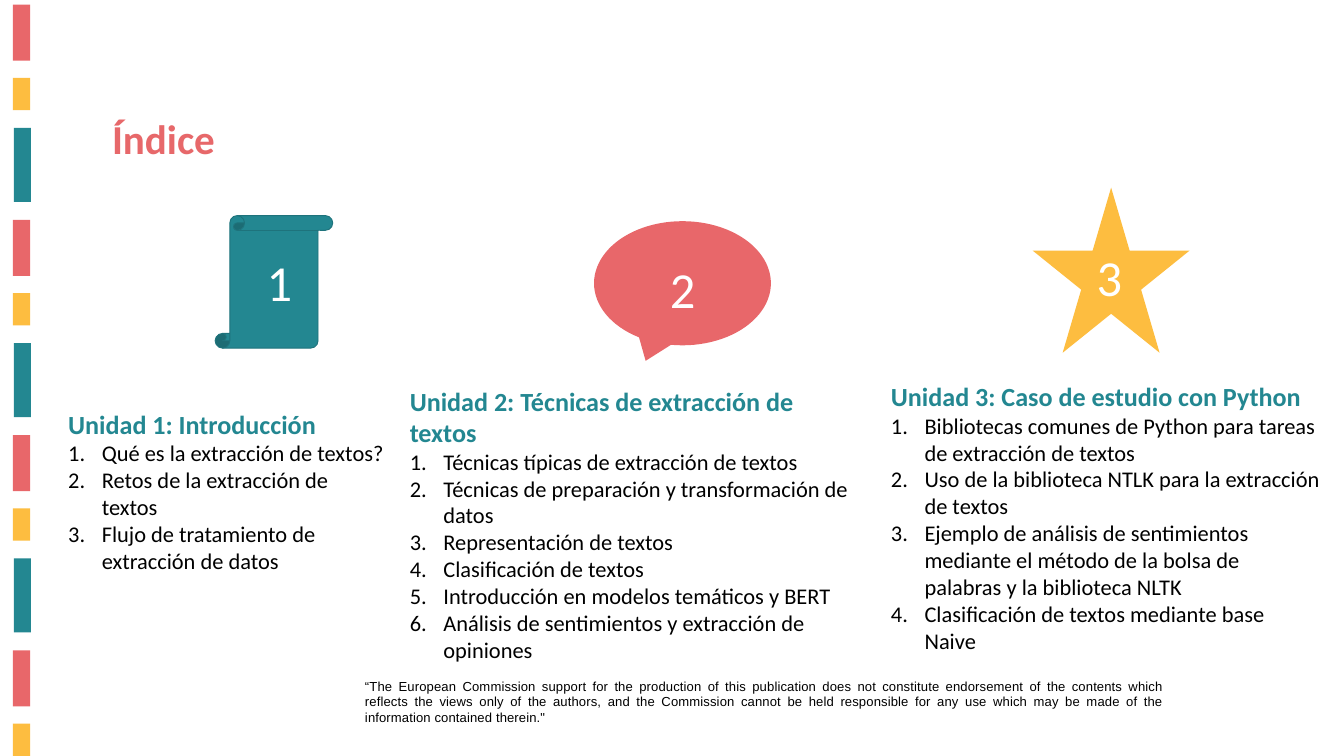
from pptx import Presentation
from pptx.dml.color import RGBColor
from pptx.enum.shapes import MSO_SHAPE as Shape
from pptx.enum.text import PP_ALIGN as Align
from pptx.oxml.ns import qn
from pptx.util import Pt
from lxml.etree import SubElement

TEAL, CORAL, YELLOW = "238791", "E8676A", "FDBD40"
BLACK, WHITE = "000000", "FFFFFF"


def colour(value):
    return RGBColor.from_string(value)


class SlideWriter:
    """Holds the slide and the style of its elements."""

    font = "Calibri"

    def __init__(self, slide):
        self.slide = slide

    def shape(self, kind, box, fill, line=None):
        shape = self.slide.shapes.add_shape(kind, *map(Pt, box))
        shape.shadow.inherit = False
        shape.fill.solid()
        shape.fill.fore_color.rgb = colour(fill)
        if line:
            shape.line.color.rgb = colour(line)
            shape.line.width = Pt(1)
        else:
            shape.line.fill.background()

    def frame(self, box):
        frame = self.slide.shapes.add_textbox(*map(Pt, box)).text_frame
        frame.word_wrap = True
        return frame

    def style(self, paragraph, size, fill, bold=False, font=None):
        for run in paragraph.runs:
            run.font.name = font or self.font
            run.font.size = Pt(size)
            run.font.bold = bold
            run.font.color.rgb = colour(fill)

    def text(self, text, box, size, fill, bold=False, font=None):
        frame = self.frame(box)
        frame.text = text
        paragraph = frame.paragraphs[0]
        self.style(paragraph, size, fill, bold, font)
        return paragraph

    def unit(self, heading, topics, box):
        frame = self.frame(box)
        frame.text = heading
        self.style(frame.paragraphs[0], 28, TEAL, True)
        for topic in topics:
            paragraph = frame.add_paragraph()
            paragraph.text = topic
            properties = paragraph._p.get_or_add_pPr()
            properties.set("marL", str(Pt(36)))
            properties.set("indent", str(-Pt(36)))
            SubElement(properties, qn("a:buFont"), typeface="+mj-lt")
            SubElement(properties, qn("a:buAutoNum"), type="arabicPeriod")
            self.style(paragraph, 24, BLACK)


def main():
    presentation = Presentation()
    presentation.slide_width, presentation.slide_height = Pt(1440), Pt(810)
    writer = SlideWriter(presentation.slides.add_slide(presentation.slide_layouts[6]))

    stripes = [(13.7, 5, 18.7, 60, CORAL), (13.7, 83.5, 18.7, 34.5, YELLOW),
               (15, 137, 18, 79.4, TEAL)]
    for index in range(11):
        cycle, position = divmod(index, len(stripes))
        left, top, width, height, fill = stripes[position]
        writer.shape(Shape.RECTANGLE, (left, top + cycle * 230.6, width, height), fill)

    disclaimer = writer.text(
        "“The European Commission support for the production of this publication does not "
        "constitute endorsement of the contents which reflects the views only of the authors, "
        "and the Commission cannot be held responsible for any use which may be made of the "
        'information contained therein."',
        (384, 723, 870, 58), 14, BLACK, font="Arial")
    disclaimer.alignment = Align.JUSTIFY
    disclaimer.runs[0]._r.get_or_add_rPr().set("spc", "10")

    writer.text("Índice", (113, 118, 487, 60), 44, "E7686A", True)

    writer.shape(Shape.VERTICAL_SCROLL, (230.5, 231, 126, 142), TEAL, "1E737C")
    writer.shape(Shape.OVAL_CALLOUT, (636.5, 237, 189.5, 133), CORAL)
    writer.shape(Shape.STAR_5_POINT, (1106.5, 201, 168, 177), YELLOW)

    writer.unit("Unidad 1: Introducción", [
        "Qué es la extracción de textos?",
        "Retos de la extracción de textos",
        "Flujo de tratamiento de extracción de datos",
    ], (66, 433.5, 354, 250))
    writer.unit("Unidad 2: Técnicas de extracción de textos", [
        "Técnicas típicas de extracción de textos",
        "Técnicas de preparación y transformación de datos",
        "Representación de textos",
        "Clasificación de textos",
        "Introducción en modelos temáticos y BERT",
        "Análisis de sentimientos y extracción de opiniones",
    ], (432, 409, 487.5, 337))
    writer.unit("Unidad 3: Caso de estudio con Python", [
        "Bibliotecas comunes de Python para tareas de extracción de textos",
        "Uso de la biblioteca NTLK para la extracción de textos",
        "Ejemplo de análisis de sentimientos mediante el método de la bolsa de palabras "
        "y la biblioteca NLTK",
        "Clasificación de textos mediante base Naive",
    ], (947.5, 404, 474.5, 303))

    numbers = [(278.6, 265.7, 114), (710.6, 273, 78), (1168, 260.6, 108)]
    for number, (left, top, width) in enumerate(numbers, 1):
        writer.text(str(number), (left, top, width, 73), 54, WHITE)

    presentation.save("out.pptx")


if __name__ == "__main__":
    main()
